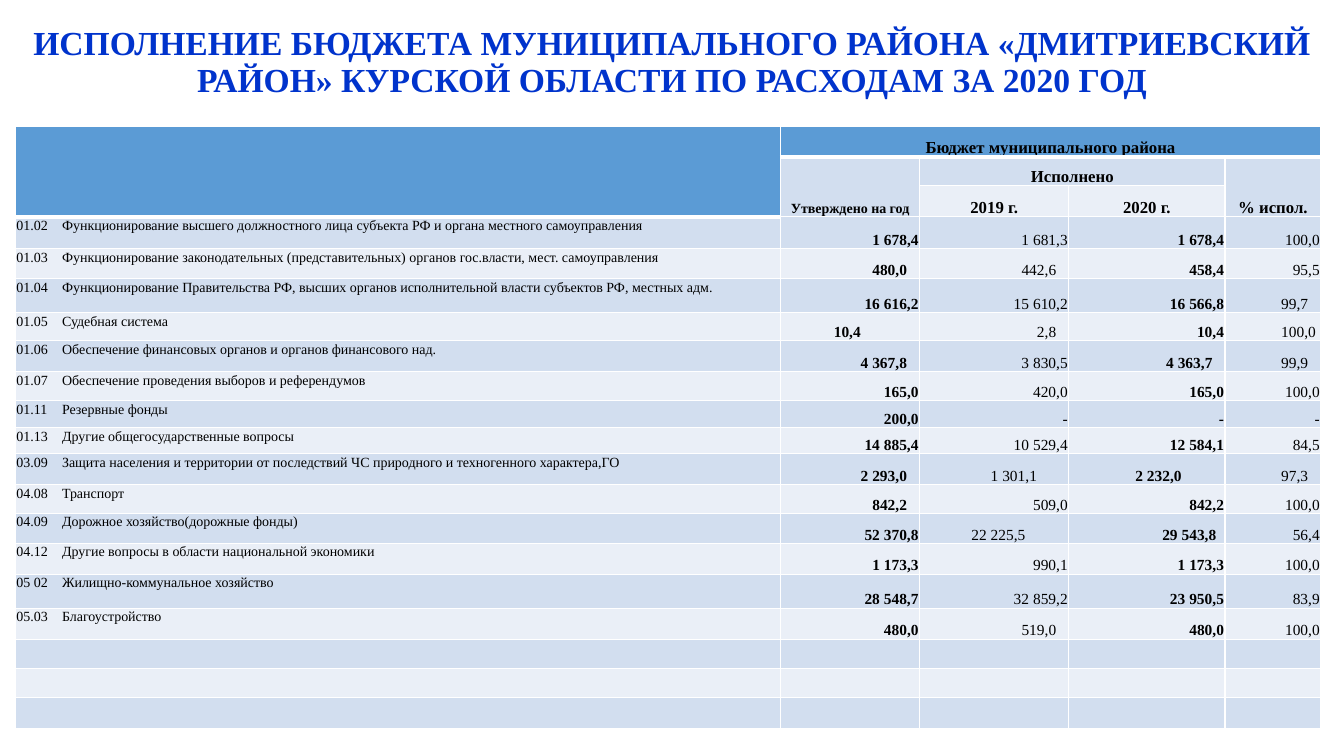
from lxml.etree import SubElement
from pptx import Presentation
from pptx.dml.color import RGBColor
from pptx.enum.text import MSO_ANCHOR, MSO_AUTO_SIZE, PP_ALIGN
from pptx.oxml.ns import qn
from pptx.util import Pt

COLORS = {"title": "0033CC", "text": "000000", "header": "5B9BD5",
          "band": "D2DEEF", "light": "EAEFF7", "border": "FFFFFF"}
FONT = "Times New Roman"
SPACE = 2.75
CODE_TAB = 32.6
COLUMNS = [546.5, 99.4, 106.6, 111.6, 68.4]
ROWS = [22.1, 20.7, 22.1, 22.9, 21.4, 24.3, 20, 22.1, 20.7, 19.3,
        18.6, 22.1, 20.7, 21.4, 22.1, 24.3, 22.1, 20.7, 20.7, 22.1]
MERGES = [(0, 0, 2, 0), (0, 1, 0, 4), (1, 1, 2, 1), (1, 2, 1, 3), (1, 4, 2, 4)]
HEADERS = [(0, 1, "Бюджет муниципального района", 12), (1, 1, "Утверждено на год", 10),
           (1, 2, "Исполнено", 12), (1, 4, "% испол.", 12),
           (2, 2, "2019 г.", 12), (2, 3, "2020 г.", 12)]
TITLE = ("ИСПОЛНЕНИЕ БЮДЖЕТА МУНИЦИПАЛЬНОГО РАЙОНА «ДМИТРИЕВСКИЙ РАЙОН» "
         "КУРСКОЙ ОБЛАСТИ ПО РАСХОДАМ ЗА 2020 ГОД")
EXPENSES = [
    ("01.02", "Функционирование высшего должностного лица субъекта РФ и органа местного самоуправления",
     "1 678,4", "1 681,3", "1 678,4", "100,0"),
    ("01.03", "Функционирование законодательных (представительных) органов гос.власти, мест. самоуправления",
     "480,0", "442,6", "458,4", "95,5"),
    ("01.04", "Функционирование Правительства РФ, высших органов исполнительной власти субъектов РФ, местных адм.",
     "16 616,2", "15 610,2", "16 566,8", "99,7"),
    ("01.05", "Судебная система", "10,4", "2,8", "10,4", "100,0"),
    ("01.06", "Обеспечение финансовых органов и органов финансового над.",
     "4 367,8", "3 830,5", "4 363,7", "99,9"),
    ("01.07", "Обеспечение проведения выборов и референдумов", "165,0", "420,0", "165,0", "100,0"),
    ("01.11", "Резервные фонды", "200,0", "-", "-", "-"),
    ("01.13", "Другие общегосударственные вопросы", "14 885,4", "10 529,4", "12 584,1", "84,5"),
    ("03.09", "Защита населения и территории от последствий ЧС природного и техногенного характера,ГО",
     "2 293,0", "1 301,1", "2 232,0", "97,3"),
    ("04.08", "Транспорт", "842,2", "509,0", "842,2", "100,0"),
    ("04.09", "Дорожное хозяйство(дорожные фонды)", "52 370,8", "22 225,5", "29 543,8", "56,4"),
    ("04.12", "Другие вопросы в области национальной экономики", "1 173,3", "990,1", "1 173,3", "100,0"),
    ("05 02", "Жилищно-коммунальное хозяйство", "28 548,7", "32 859,2", "23 950,5", "83,9"),
    ("05.03", "Благоустройство", "480,0", "519,0", "480,0", "100,0"),
]
RIGHT_SPACES = {
    ("01.03", 1): 3, ("01.03", 2): 3, ("01.04", 4): 3, ("01.05", 1): 15,
    ("01.05", 2): 3, ("01.05", 4): 1, ("01.06", 1): 3, ("01.06", 3): 3,
    ("01.06", 4): 3, ("03.09", 1): 3, ("03.09", 2): 8, ("03.09", 3): 11,
    ("03.09", 4): 3, ("04.08", 1): 3, ("04.09", 2): 11, ("04.09", 3): 2,
    ("05.03", 2): 3,
}


def set_attrs(obj, values):
    """Set every attribute named in a dict of format values."""
    for name, value in values.items():
        setattr(obj, name, value)


def write(p, text, size, bold, align, color="text"):
    """Write one formatted run into a paragraph."""
    p.alignment = align
    r = p.add_run()
    r.text = text
    set_attrs(r.font, {"name": FONT, "size": Pt(size), "bold": bold})
    r.font.color.rgb = RGBColor.from_string(COLORS[color])


def is_header(row, col):
    """Tell whether a cell belongs to the dark header."""
    return row == 0 or (col == 0 and row < 3)


def style_cell(cell, row, col):
    """Give a cell its margins, borders, fill and empty-line size."""
    set_attrs(cell, {"margin_left": Pt(0.75), "margin_right": Pt(0.75),
                     "margin_top": Pt(0.75), "margin_bottom": Pt(0),
                     "vertical_anchor": MSO_ANCHOR.BOTTOM if col or row < 3 else MSO_ANCHOR.TOP})
    widths = {"L": 1, "R": 1, "T": 3 if row and is_header(row - 1, col) else 1,
              "B": 3 if is_header(row, col) else 1}
    for side, width in widths.items():
        ln = SubElement(cell._tc.get_or_add_tcPr(), qn(f"a:ln{side}"), w=str(Pt(width)))
        fill = SubElement(ln, qn("a:solidFill"))
        SubElement(fill, qn("a:srgbClr"), val=COLORS["border"])
    cell.fill.solid()
    shade = "header" if is_header(row, col) else "band" if row % 2 else "light"
    cell.fill.fore_color.rgb = RGBColor.from_string(COLORS[shade])
    SubElement(cell.text_frame.paragraphs[0]._p, qn("a:endParaRPr"), sz="1000")


def add_title(s, left, top, width, height):
    """Place and format the slide title."""
    sp = s.shapes.title
    set_attrs(sp, {"left": Pt(left), "top": Pt(top), "width": Pt(width), "height": Pt(height)})
    tf = sp.text_frame
    set_attrs(tf, {"word_wrap": True, "auto_size": MSO_AUTO_SIZE.NONE,
                   "vertical_anchor": MSO_ANCHOR.MIDDLE})
    p = tf.paragraphs[0]
    p.line_spacing = 0.9
    write(p, TITLE, 24, True, PP_ALIGN.CENTER, "title")


def fill_expenses(table, first_row):
    """Write the expense names and their values."""
    for row, (code, name, *values) in enumerate(EXPENSES, first_row):
        p = table.cell(row, 0).text_frame.paragraphs[0]
        write(p, f"{code}\t{name}", 10, False, PP_ALIGN.LEFT)
        tabs = SubElement(p._p.get_or_add_pPr(), qn("a:tabLst"))
        SubElement(tabs, qn("a:tab"), pos=str(Pt(CODE_TAB)), algn="l")
        for col, value in enumerate(values, 1):
            cell = table.cell(row, col)
            cell.margin_right = Pt(0.75 + SPACE * RIGHT_SPACES.get((code, col), 0))
            write(cell.text_frame.paragraphs[0], value, 11, col in (1, 3), PP_ALIGN.RIGHT)


def add_budget_table(s, left, top):
    """Build the budget table from its upper left corner."""
    table = s.shapes.add_table(len(ROWS), len(COLUMNS), Pt(left), Pt(top),
                               Pt(sum(COLUMNS)), Pt(sum(ROWS))).table
    set_attrs(table, {"first_row": False, "horz_banding": False})
    for column, width in zip(table.columns, COLUMNS):
        column.width = Pt(width)
    for row, height in enumerate(ROWS):
        table.rows[row].height = Pt(height)
        for col in range(len(COLUMNS)):
            style_cell(table.cell(row, col), row, col)
    for row, col, last_row, last_col in MERGES:
        table.cell(row, col).merge(table.cell(last_row, last_col))
    for row, col, text, size in HEADERS:
        write(table.cell(row, col).text_frame.paragraphs[0], text, size, True, PP_ALIGN.CENTER)
    fill_expenses(table, 3)


def main():
    """Build and save the slide."""
    prs = Presentation()
    set_attrs(prs, {"slide_width": Pt(960), "slide_height": Pt(540)})
    s = prs.slides.add_slide(prs.slide_layouts[5])
    add_title(s, 0, 0, 960, 90)
    add_budget_table(s, 11, 90)
    prs.save("out.pptx")


if __name__ == "__main__":
    main()
